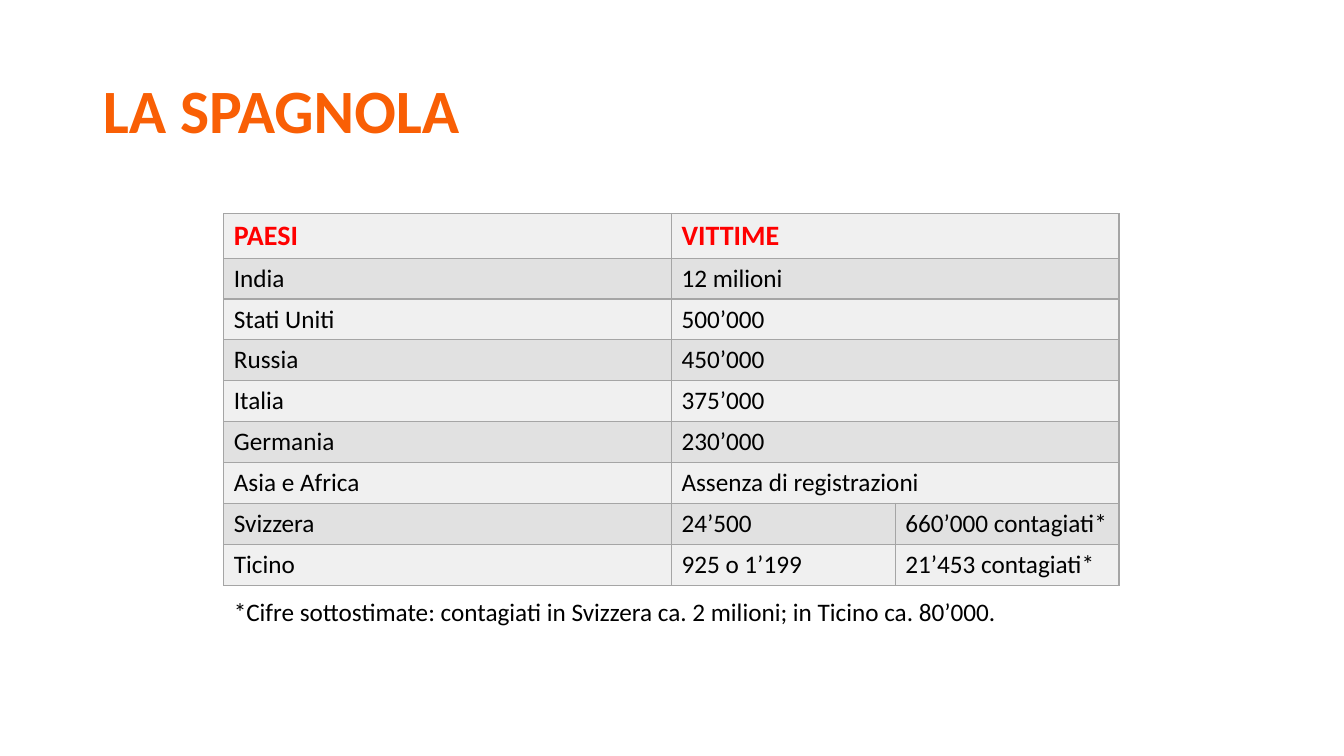
import pptx
import pptx.dml.color
import pptx.enum.text
import pptx.oxml
import pptx.oxml.ns
import pptx.util

PX = 9144  # 100 px to the inch
FONT = "Calibri"
COLORS = {
    "title": "F95F05",
    "head": "FF0000",
    "text": "000000",
    "light": "F0F0F0",
    "dark": "E1E1E1",
    "line": "A5A5A5",
}
ROWS = [
    ("PAESI", "VITTIME"),
    ("India", "12 milioni"),
    ("Stati Uniti", "500’000"),
    ("Russia", "450’000"),
    ("Italia", "375’000"),
    ("Germania", "230’000"),
    ("Asia e Africa", "Assenza di registrazioni"),
    ("Svizzera", "24’500", "660’000 contagiati*"),
    ("Ticino", "925 o 1’199", "21’453 contagiati*"),
]
NOTE = "*Cifre sottostimate: contagiati in Svizzera ca. 2 milioni; in Ticino ca. 80’000."


def scale(*sizes):
    return [pptx.util.Emu(size * PX) for size in sizes]


def color(name):
    return pptx.dml.color.RGBColor.from_string(COLORS[name])


def style(par, size, name, bold=False):
    par.font.name = FONT
    par.font.size = pptx.util.Pt(size)
    par.font.bold = bold
    par.font.color.rgb = color(name)


def border(cell):
    """Draw a thin line on all four sides; call before filling the cell."""
    props = cell._tc.get_or_add_tcPr()
    for side in "LRTB":
        props.append(pptx.oxml.parse_xml(
            f'<a:ln{side} {pptx.oxml.ns.nsdecls("a")} w="12700"><a:solidFill>'
            f'<a:srgbClr val="{COLORS["line"]}"/></a:solidFill></a:ln{side}>'))


def add_title(slide, box):
    title = slide.shapes.title
    title.left, title.top, title.width, title.height = scale(*box)
    frame = title.text_frame
    frame.text = "LA SPAGNOLA"
    frame.vertical_anchor = pptx.enum.text.MSO_ANCHOR.MIDDLE
    par = frame.paragraphs[0]
    par.alignment = pptx.enum.text.PP_ALIGN.LEFT
    par.line_spacing = 0.9
    style(par, 44, "title", True)


def add_deaths(slide, box):
    """Country column takes half the width; the other two share the rest."""
    left, top, width, height = box
    table = slide.shapes.add_table(len(ROWS), 3, *scale(*box)).table
    for col, part in zip(table.columns, (2, 4, 4)):
        col.width = scale(width // part)[0]
    head = 44
    for index, (row, texts) in enumerate(zip(table.rows, ROWS)):
        row.height = scale((height - head) // (len(ROWS) - 1) if index else head)[0]
        for cell in row.cells:
            border(cell)
            cell.fill.solid()
            cell.fill.fore_color.rgb = color("dark" if index % 2 else "light")
            cell.vertical_anchor = pptx.enum.text.MSO_ANCHOR.MIDDLE
        if len(texts) == 2:
            table.cell(index, 1).merge(table.cell(index, 2))
        for cell, text in zip(row.cells, texts):
            cell.text = text
            par = cell.text_frame.paragraphs[0]
            if index:
                style(par, 18, "text")
            else:
                style(par, 20, "head", True)


def add_note(slide, box):
    frame = slide.shapes.add_textbox(*scale(*box)).text_frame
    frame.word_wrap = False
    frame.auto_size = pptx.enum.text.MSO_AUTO_SIZE.SHAPE_TO_FIT_TEXT
    frame.text = NOTE
    style(frame.paragraphs[0], 18, "text")


def main():
    deck = pptx.Presentation()
    deck.slide_width, deck.slide_height = scale(1333, 750)
    slide = deck.slides.add_slide(deck.slide_layouts[5])
    add_title(slide, (92, 40, 1150, 145))
    add_deaths(slide, (222, 212, 888, 364))
    add_note(slide, (222, 587, 779, 40))
    deck.save("out.pptx")


if __name__ == "__main__":
    main()
